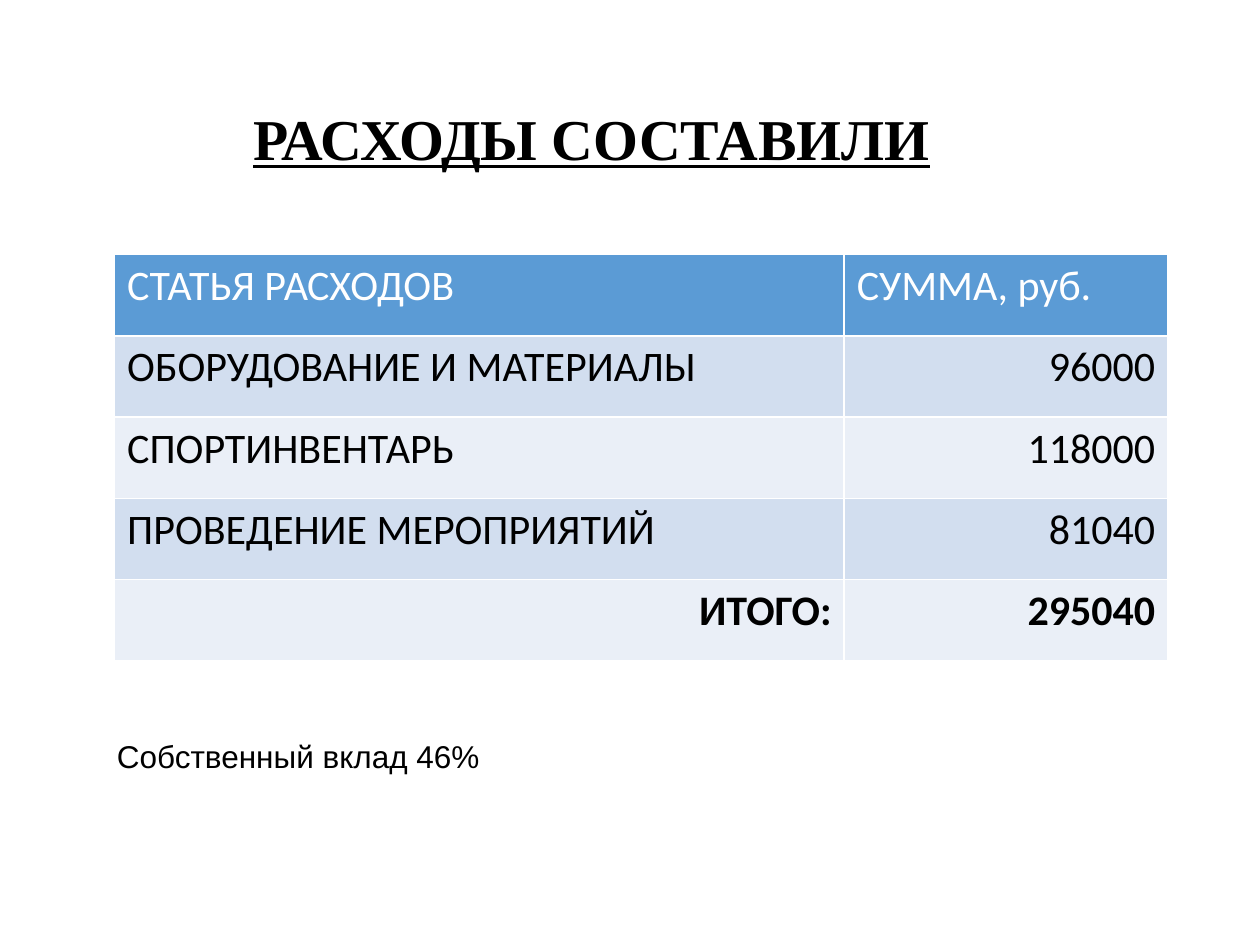
from lxml.etree import SubElement
from pptx import Presentation
from pptx.dml.color import RGBColor
from pptx.enum.text import MSO_ANCHOR, PP_ALIGN
from pptx.oxml.ns import qn
from pptx.util import Inches, Pt

TITLE = "РАСХОДЫ СОСТАВИЛИ"
NOTE = "Собственный вклад 46%"
ROWS = [
    ("СТАТЬЯ РАСХОДОВ", "СУММА, руб."),
    ("ОБОРУДОВАНИЕ И МАТЕРИАЛЫ", "96000"),
    ("СПОРТИНВЕНТАРЬ", "118000"),
    ("ПРОВЕДЕНИЕ МЕРОПРИЯТИЙ", "81040"),
    ("ИТОГО:", "295040"),
]
COLS = (5.79, 2.57)
ROW = 0.645
HEAD, BANDS = "5B9BD5", ("EAEFF7", "D2DEEF")
BLACK, WHITE = "000000", "FFFFFF"


def color(code):
    return RGBColor.from_string(code)


def write(frame, text, font, size, ink=BLACK, bold=False, align=PP_ALIGN.LEFT):
    para = frame.paragraphs[0]
    para.alignment = align
    run = para.add_run()
    run.text = text
    run.font.name = font
    run.font.size = Pt(size)
    run.font.bold = bold
    run.font.color.rgb = color(ink)
    return para, run


def add_box(slide, *place):
    frame = slide.shapes.add_textbox(*map(Inches, place)).text_frame
    frame.word_wrap = True
    return frame


def add_edges(cell):
    props = cell._tc.get_or_add_tcPr()
    for side in "LRTB":
        line = SubElement(props, qn(f"a:ln{side}"), w=str(Pt(1)))
        fill = SubElement(line, qn("a:solidFill"))
        SubElement(fill, qn("a:srgbClr"), val=WHITE)


def fill_cell(cell, text, row, col):
    head, total = row == 0, row == len(ROWS) - 1
    right = total or (col == 1 and not head)
    add_edges(cell)
    cell.fill.solid()
    cell.fill.fore_color.rgb = color(HEAD if head else BANDS[row % 2])
    write(cell.text_frame, text, "Calibri", 24, WHITE if head else BLACK,
          total, PP_ALIGN.RIGHT if right else PP_ALIGN.LEFT)


def main():
    deck = Presentation()
    deck.slide_width, deck.slide_height = Inches(10), Inches(7.5)
    slide = deck.slides.add_slide(deck.slide_layouts[6])

    frame = add_box(slide, 0.69, 0.4, 8.01, 1.45)
    frame.vertical_anchor = MSO_ANCHOR.MIDDLE
    para, run = write(frame, TITLE, "Times New Roman", 33, bold=True,
                      align=PP_ALIGN.CENTER)
    para.line_spacing = 0.9
    run.font.underline = True

    size = map(Inches, (0.91, 2.02, sum(COLS), ROW * len(ROWS)))
    table = slide.shapes.add_table(len(ROWS), len(COLS), *size).table
    for col, width in zip(table.columns, COLS):
        col.width = Inches(width)
    for r, row in enumerate(ROWS):
        table.rows[r].height = Inches(ROW)
        for c, text in enumerate(row):
            fill_cell(table.cell(r, c), text, r, c)

    write(add_box(slide, 0.83, 5.8, 8.9, 0.4), NOTE, "Arial", 18)
    deck.save("out.pptx")


if __name__ == "__main__":
    main()
